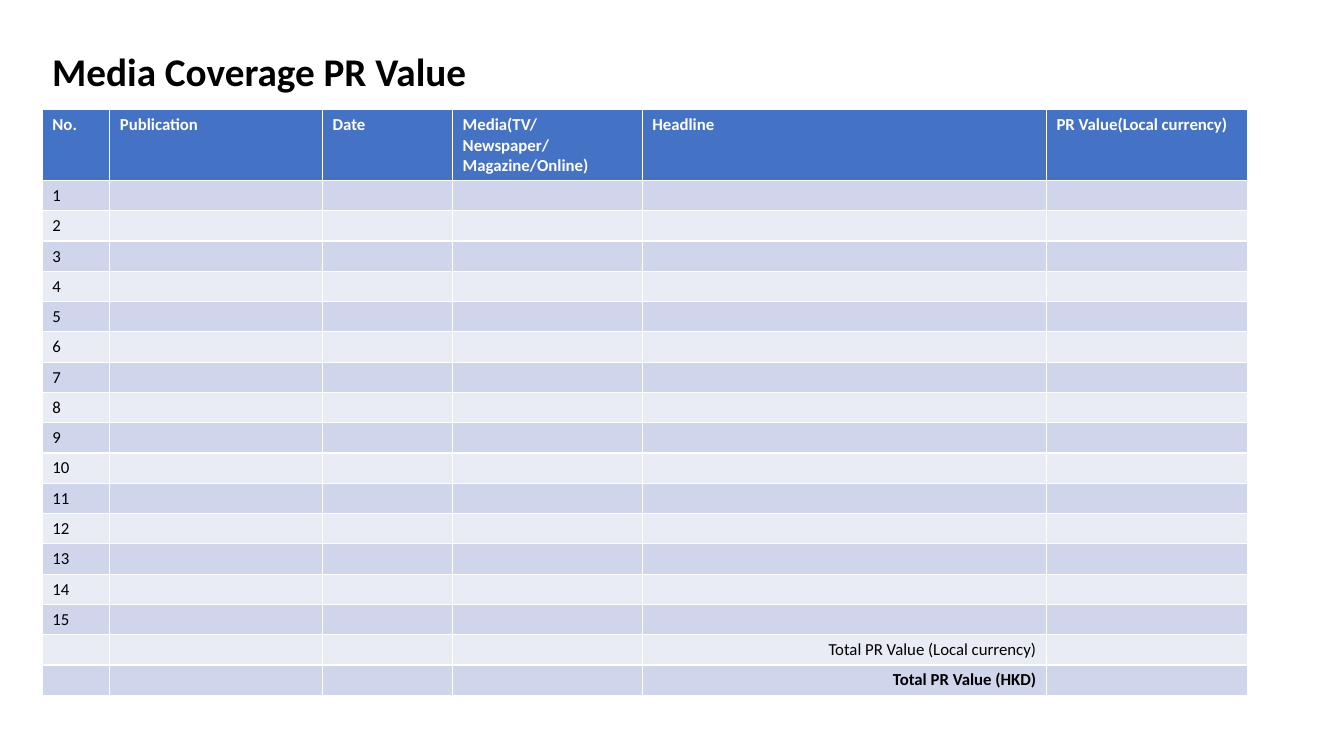
"""Build the media coverage PR value slide."""
from pptx import Presentation
from pptx.dml.color import RGBColor
from pptx.enum.text import MSO_ANCHOR, PP_ALIGN
from pptx.oxml.xmlchemy import OxmlElement
from pptx.util import Inches, Pt

LEFT, RIGHT = PP_ALIGN.LEFT, PP_ALIGN.RIGHT
MIDDLE = MSO_ANCHOR.MIDDLE
FONT = "Calibri"
BODY_SIZE = 12
COLORS = {"header": "4472C4", "odd": "CFD5EA", "even": "E9EBF5",
          "white": "FFFFFF", "black": "000000"}
COLUMNS = [("No.", 0.67), ("Publication", 2.11), ("Date", 1.29),
           ("Media(TV/Newspaper/Magazine/Online)", 1.88),
           ("Headline", 4.01), ("PR Value(Local currency)", 1.99)]
ENTRY_COUNT = 15
TOTALS = [("Total PR Value (Local currency)", False),
          ("Total PR Value (HKD)", True)]
TOTAL_COLUMN = 4
HEADER_HEIGHT, ROW_HEIGHT = 0.7, 0.3


def color(name):
    return RGBColor.from_string(COLORS[name])


def style_text(paragraph, size, ink, bold=False, align=LEFT):
    paragraph.alignment = align
    font = paragraph.font
    font.name, font.size, font.bold = FONT, Pt(size), bold
    font.color.rgb = color(ink)


def add_title(slide, wording):
    title = slide.shapes.add_textbox(Inches(0.42), Inches(0.37),
                                     Inches(11.5), Inches(0.72))
    frame = title.text_frame
    frame.word_wrap = True
    frame.vertical_anchor = MIDDLE
    heading = frame.paragraphs[0]
    heading.text = wording
    heading.line_spacing = 0.9
    style_text(heading, 28, "black", bold=True)


def fill_cell(cell, wording, background, ink="black", bold=False, align=LEFT):
    cell.fill.solid()
    cell.fill.fore_color.rgb = color(background)
    paragraph = cell.text_frame.paragraphs[0]
    paragraph.text = wording
    style_text(paragraph, BODY_SIZE, ink, bold, align)
    if not wording:
        empty_size = OxmlElement("a:endParaRPr")
        empty_size.set("sz", str(BODY_SIZE * 100))
        paragraph._p.append(empty_size)


def add_coverage_table(slide):
    row_count = 1 + ENTRY_COUNT + len(TOTALS)
    width = sum(column_width for _, column_width in COLUMNS)
    height = HEADER_HEIGHT + ROW_HEIGHT * (row_count - 1)
    coverage = slide.shapes.add_table(
        row_count, len(COLUMNS), Inches(0.42), Inches(1.09),
        Inches(width), Inches(height)).table

    for index, (label, column_width) in enumerate(COLUMNS):
        coverage.columns[index].width = Inches(column_width)
        fill_cell(coverage.cell(0, index), label, "header", "white", bold=True)
    coverage.rows[0].height = Inches(HEADER_HEIGHT)

    for row in range(1, row_count):
        coverage.rows[row].height = Inches(ROW_HEIGHT)
        band = "odd" if row % 2 else "even"
        is_entry = row <= ENTRY_COUNT
        for column in range(len(COLUMNS)):
            cell = coverage.cell(row, column)
            if is_entry and column == 0:
                fill_cell(cell, str(row), band)
            elif not is_entry and column == TOTAL_COLUMN:
                label, bold = TOTALS[row - ENTRY_COUNT - 1]
                fill_cell(cell, label, band, bold=bold, align=RIGHT)
            else:
                fill_cell(cell, "", band)


def main():
    deck = Presentation()
    deck.slide_width, deck.slide_height = Inches(13.33), Inches(7.5)
    slide = deck.slides.add_slide(deck.slide_layouts[6])
    add_title(slide, "Media Coverage PR Value")
    add_coverage_table(slide)
    deck.save("out.pptx")


if __name__ == "__main__":
    main()
